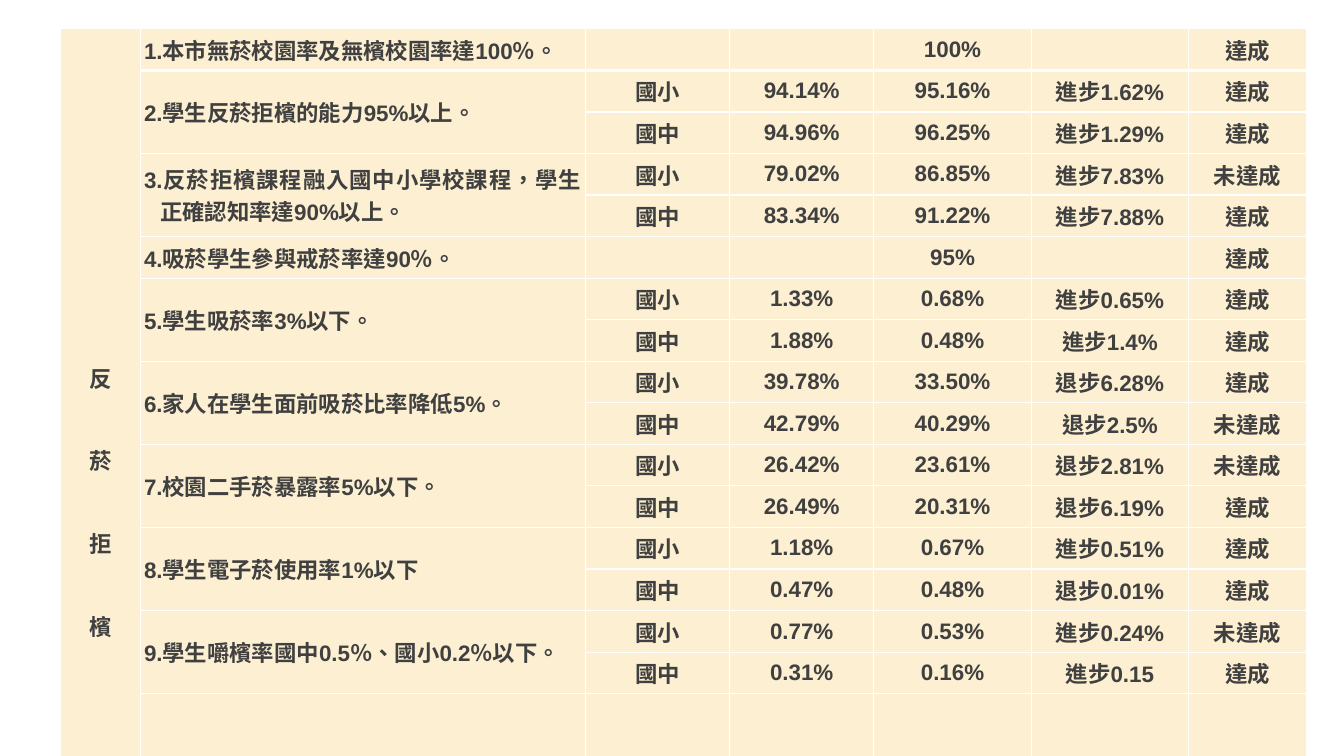
from lxml.etree import SubElement
from pptx import Presentation
from pptx.dml.color import RGBColor
from pptx.enum.lang import MSO_LANGUAGE_ID
from pptx.enum.text import MSO_ANCHOR, PP_ALIGN
from pptx.oxml import parse_xml
from pptx.oxml.ns import nsdecls, qn
from pptx.util import Pt

COLORS = {"cell": "FCEFD2", "text": "404040", "border": "FFFFFF"}
FONT = "Arial"
HANGING = 11.5
CATEGORY = "反菸拒檳"
COLUMN_WIDTHS = [57, 318, 103, 103, 112.5, 112.5, 84]
ROW_HEIGHT = 29.7

# Each goal: wording, then rows of (school, before, after, change, result)
GOALS = [
    ("1.本市無菸校園率及無檳校園率達100％。", [("", "", "100%", "", "達成")]),
    ("2.學生反菸拒檳的能力95%以上。", [
        ("國小", "94.14%", "95.16%", "進步1.62%", "達成"),
        ("國中", "94.96%", "96.25%", "進步1.29%", "達成")]),
    ("3.反菸拒檳課程融入國中小學校課程，學生正確認知率達90%以上。", [
        ("國小", "79.02%", "86.85%", "進步7.83%", "未達成"),
        ("國中", "83.34%", "91.22%", "進步7.88%", "達成")]),
    ("4.吸菸學生參與戒菸率達90％。", [("", "", "95%", "", "達成")]),
    ("5.學生吸菸率3%以下。", [
        ("國小", "1.33%", "0.68%", "進步0.65%", "達成"),
        ("國中", "1.88%", "0.48%", "進步1.4%", "達成")]),
    ("6.家人在學生面前吸菸比率降低5%。", [
        ("國小", "39.78%", "33.50%", "退步6.28%", "達成"),
        ("國中", "42.79%", "40.29%", "退步2.5%", "未達成")]),
    ("7.校園二手菸暴露率5%以下。", [
        ("國小", "26.42%", "23.61%", "退步2.81%", "未達成"),
        ("國中", "26.49%", "20.31%", "退步6.19%", "達成")]),
    ("8.學生電子菸使用率1%以下", [
        ("國小", "1.18%", "0.67%", "進步0.51%", "達成"),
        ("國中", "0.47%", "0.48%", "退步0.01%", "達成")]),
    ("9.學生嚼檳率國中0.5％、國小0.2％以下。", [
        ("國小", "0.77%", "0.53%", "進步0.24%", "未達成"),
        ("國中", "0.31%", "0.16%", "進步0.15", "達成")]),
]


def add_borders(cell, widths):
    """Draw the left, right, top and bottom borders, which precede the fill."""
    properties = cell._tc.get_or_add_tcPr()
    for position, (side, width) in enumerate(zip("LRTB", widths)):
        line = parse_xml(f'<a:ln{side} {nsdecls("a")} w="{Pt(width)}"/>')
        fill = SubElement(line, qn("a:solidFill"))
        SubElement(fill, qn("a:srgbClr"), val=COLORS["border"])
        properties.insert(position, line)


def style_cell(cell, row):
    cell.fill.solid()
    cell.fill.fore_color.rgb = RGBColor.from_string(COLORS["cell"])
    cell.vertical_anchor = MSO_ANCHOR.MIDDLE
    cell.margin_left = cell.margin_right = Pt(2.7)
    cell.margin_top = cell.margin_bottom = Pt(0)
    top = 3 if row == 1 else 1
    bottom = 3 if row == 0 else 1
    add_borders(cell, (1, 1, top, bottom))


def write(paragraph, text, align=PP_ALIGN.CENTER, hanging=0):
    paragraph.alignment = align
    if hanging:
        properties = paragraph._p.get_or_add_pPr()
        properties.set("marL", str(Pt(hanging)))
        properties.set("indent", str(Pt(-hanging)))
    run = paragraph.add_run()
    run.text = text
    run.font.name = FONT
    run.font.size = Pt(16)
    run.font.bold = True
    run.font.language_id = MSO_LANGUAGE_ID.TRADITIONAL_CHINESE
    run.font.color.rgb = RGBColor.from_string(COLORS["text"])


def write_category(cell):
    """Stack the characters of the category from top to bottom."""
    frame = cell.text_frame
    for index, character in enumerate(CATEGORY):
        paragraph = frame.add_paragraph() if index else frame.paragraphs[0]
        last = index == len(CATEGORY) - 1
        write(paragraph, character, hanging=0 if last else HANGING)
        if index:
            paragraph.space_before = Pt(36)


def write_goal(table, first_row, wording, results):
    goal = table.cell(first_row, 1)
    if len(results) > 1:
        goal.merge(table.cell(first_row + len(results) - 1, 1))
    align = PP_ALIGN.JUSTIFY if wording.endswith("。") else PP_ALIGN.LEFT
    write(goal.text_frame.paragraphs[0], wording, align, HANGING)
    for row, values in enumerate(results, first_row):
        for column, value in enumerate(values, 2):
            if value:
                write(table.cell(row, column).text_frame.paragraphs[0], value)


def add_results_table(slide):
    # One empty row closes the table below the goals
    row_count = sum(len(results) for _, results in GOALS) + 1
    table = slide.shapes.add_table(
        row_count, len(COLUMN_WIDTHS), Pt(43.2), Pt(20.6),
        Pt(sum(COLUMN_WIDTHS)), Pt(ROW_HEIGHT * row_count)).table
    table.first_row = table.horz_banding = False
    for column, width in zip(table.columns, COLUMN_WIDTHS):
        column.width = Pt(width)
    for index, row in enumerate(table.rows):
        row.height = Pt(ROW_HEIGHT)
        for cell in row.cells:
            style_cell(cell, index)

    category = table.cell(0, 0)
    category.merge(table.cell(row_count - 1, 0))
    write_category(category)
    first_row = 0
    for wording, results in GOALS:
        write_goal(table, first_row, wording, results)
        first_row += len(results)


def main():
    presentation = Presentation()
    presentation.slide_width = Pt(960)
    presentation.slide_height = Pt(540)
    slide = presentation.slides.add_slide(presentation.slide_layouts[6])
    add_results_table(slide)
    presentation.save("out.pptx")


if __name__ == "__main__":
    main()
